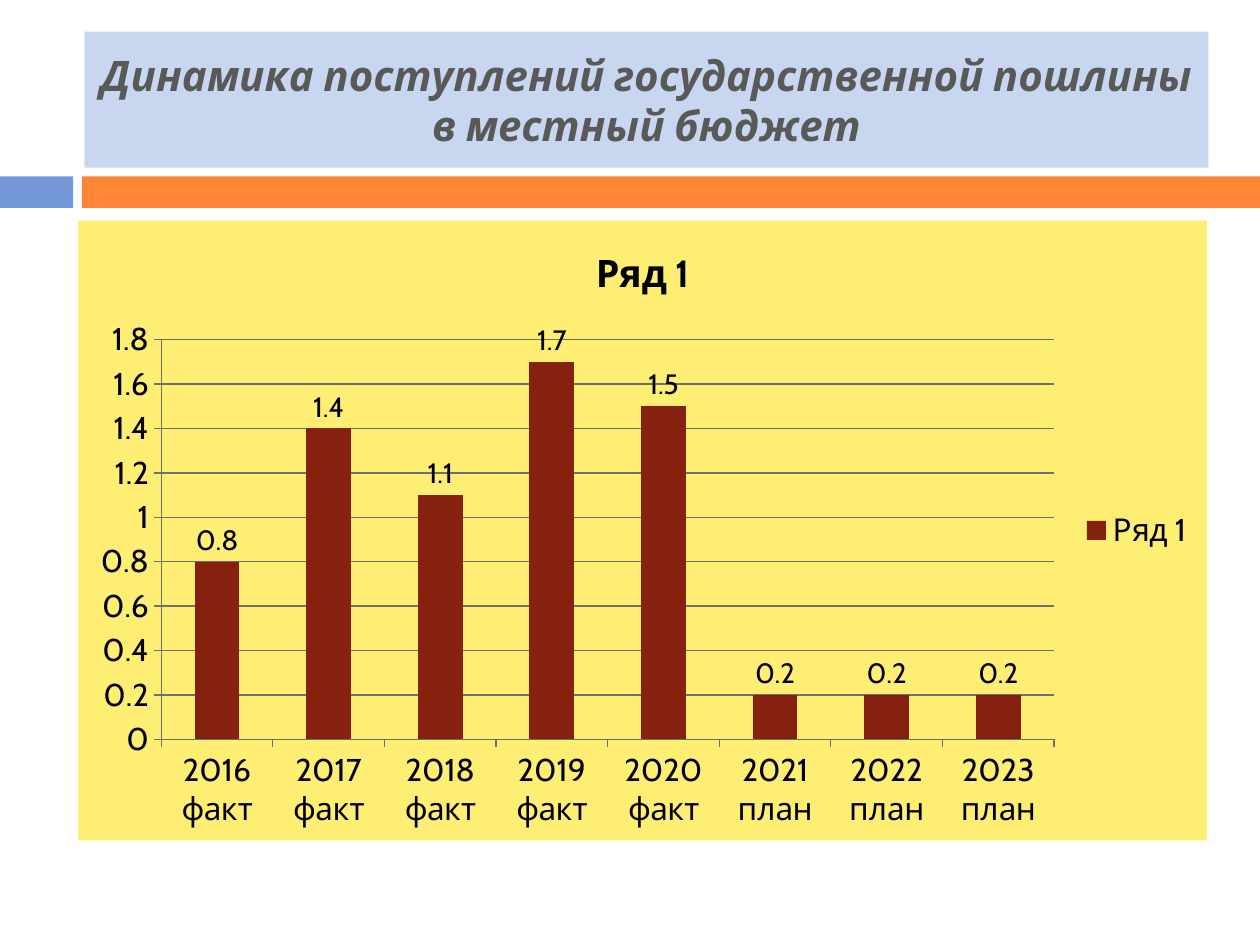
"""Build a slide with a column chart of state duty receipts in the local budget."""
from dataclasses import dataclass

from lxml.etree import fromstring
from pptx import Presentation
from pptx.chart.data import CategoryChartData
from pptx.dml.color import RGBColor as RGB
from pptx.enum.chart import XL_CHART_TYPE as CT, XL_LABEL_POSITION as LP
from pptx.enum.chart import XL_LEGEND_POSITION as LG, XL_TICK_MARK as TM
from pptx.enum.shapes import MSO_SHAPE as SH
from pptx.enum.text import MSO_ANCHOR as VA, PP_ALIGN as AL
from pptx.util import Inches, Pt

TITLE = "Динамика поступлений государственной пошлины в местный бюджет"
SERIES = "Ряд 1"
DUTY = [("2016 факт", 0.8), ("2017 факт", 1.4), ("2018 факт", 1.1), ("2019 факт", 1.7),
        ("2020 факт", 1.5), ("2021 план", 0.2), ("2022 план", 0.2), ("2023 план", 0.2)]
W, H = 10, 7.5
LEFT, RIGHT = 0.65, 9.59
BAND_TOP, BAND_H = 1.4, 0.25


@dataclass(frozen=True)
class Theme:
    font: str = "Cabin"
    blue: str = "7598D9"
    orange: str = "FE8637"
    pale: str = "C8D6F0"
    yellow: str = "FFEE74"
    bar: str = "862110"
    grey: str = "595959"
    line: str = "6F6F6F"
    black: str = "000000"
    title: float = 24
    chart_title: float = 21.6
    body: float = 18
    label: float = 16


T = Theme()


def style(font, size=T.body, color=T.black, bold=False, italic=False):
    font.name, font.size, font.bold, font.italic = T.font, Pt(size), bold, italic
    font.color.rgb = RGB.from_string(color)


def add_text(tf, text, align=AL.CENTER, **fmt):
    p = tf.paragraphs[0]
    p.alignment = align
    r = p.add_run()
    r.text = text
    style(r.font, **fmt)


def add_rect(s, box, color):
    sp = s.shapes.add_shape(SH.RECTANGLE, *map(Inches, box))
    sp.shadow.inherit = False
    sp.fill.solid()
    sp.fill.fore_color.rgb = RGB.from_string(color)
    sp.line.fill.background()
    return sp


def set_line(line):
    line.color.rgb = RGB.from_string(T.line)
    line.width = Pt(0.75)


def add_duty_chart(s, box):
    data = CategoryChartData()
    data.categories = [name for name, _ in DUTY]
    data.add_series(SERIES, [value for _, value in DUTY])
    ch = s.shapes.add_chart(CT.COLUMN_CLUSTERED, *map(Inches, box), data).chart
    style(ch.font)
    ch.has_title = True
    add_text(ch.chart_title.text_frame, SERIES, size=T.chart_title, bold=True)
    ch.has_legend = True
    ch.legend.position, ch.legend.include_in_layout = LG.RIGHT, False

    for axis in (ch.category_axis, ch.value_axis):
        axis.major_tick_mark, axis.minor_tick_mark = TM.OUTSIDE, TM.NONE
        set_line(axis.format.line)
        style(axis.tick_labels.font)
    ch.value_axis.has_major_gridlines = True
    set_line(ch.value_axis.major_gridlines.format.line)
    ch.value_axis.minimum_scale, ch.value_axis.maximum_scale = 0, 1.8
    ch.value_axis.major_unit = 0.2

    plot = ch.plots[0]
    plot.gap_width, plot.vary_by_categories = 150, False
    fill = plot.series[0].format.fill
    fill.solid()
    fill.fore_color.rgb = RGB.from_string(T.bar)
    plot.has_data_labels = True
    labels = plot.data_labels
    labels.show_value, labels.position = True, LP.OUTSIDE_END
    style(labels.font, size=T.label)

    ns = "http://schemas.openxmlformats.org/drawingml/2006/"
    area = fromstring(
        f'<c:spPr xmlns:c="{ns}chart" xmlns:a="{ns}main"><a:solidFill>'
        f'<a:srgbClr val="{T.yellow}"/></a:solidFill><a:ln><a:noFill/></a:ln></c:spPr>')
    ch.element.find(f"{{{ns}chart}}chart").addnext(area)


def main():
    prs = Presentation()
    prs.slide_width, prs.slide_height = Inches(W), Inches(H)
    s = prs.slides.add_slide(prs.slide_layouts[6])
    add_rect(s, (0, BAND_TOP, 0.58, BAND_H), T.blue)
    add_rect(s, (LEFT, BAND_TOP, W - LEFT, BAND_H), T.orange)
    tf = add_rect(s, (0.67, 0.25, RIGHT - 0.67, 1.08), T.pale).text_frame
    tf.word_wrap, tf.vertical_anchor = True, VA.MIDDLE
    add_text(tf, TITLE, size=T.title, color=T.grey, bold=True, italic=True)
    add_duty_chart(s, (0.62, 1.75, RIGHT - 0.63, 4.92))
    prs.save("out.pptx")


if __name__ == "__main__":
    main()
